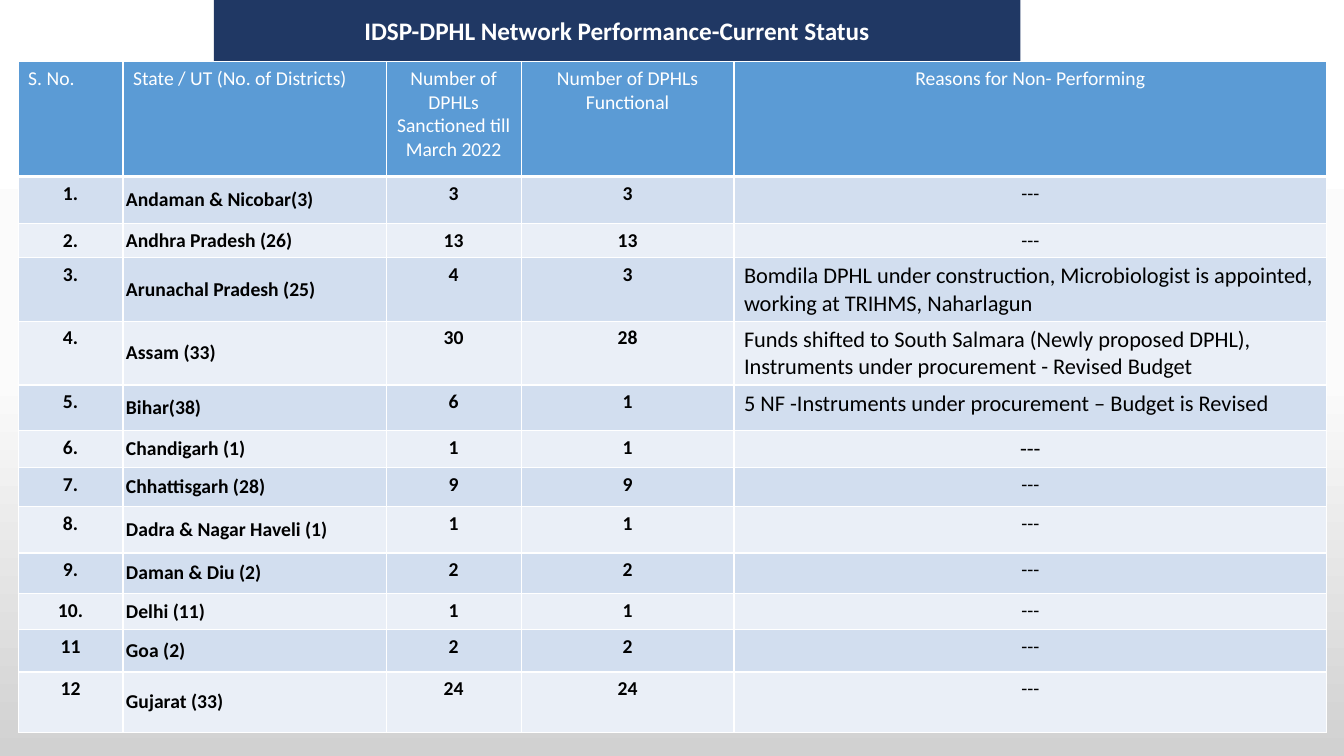
import copy

import lxml.etree
import pptx
import pptx.dml.color
import pptx.enum.text
import pptx.oxml.ns
import pptx.util

PX = 9144
WHITE = pptx.dml.color.RGBColor(0xFF, 0xFF, 0xFF)
BLACK = pptx.dml.color.RGBColor(0x00, 0x00, 0x00)
NAVY = pptx.dml.color.RGBColor(0x20, 0x38, 0x64)
BLUE = pptx.dml.color.RGBColor(0x5B, 0x9B, 0xD5)
BAND_DARK = pptx.dml.color.RGBColor(0xD2, 0xDE, 0xEF)
BAND_LIGHT = pptx.dml.color.RGBColor(0xEA, 0xEF, 0xF7)
MIST = pptx.dml.color.RGBColor(0xFB, 0xFB, 0xFB)
GREY = pptx.dml.color.RGBColor(0xD1, 0xD1, 0xD1)

LEFT = pptx.enum.text.PP_ALIGN.LEFT
CENTER = pptx.enum.text.PP_ALIGN.CENTER
MIDDLE = pptx.enum.text.MSO_ANCHOR.MIDDLE

HEADINGS = [
    "S. No.",
    "State / UT (No. of Districts)",
    "Number of DPHLs Sanctioned till March 2022",
    "Number of DPHLs Functional",
    "Reasons for Non- Performing",
]
NONE = "---"
STATES = [
    ("1.", "Andaman & Nicobar(3)", "3", "3", NONE),
    ("2.", "Andhra Pradesh (26)", "13", "13", NONE),
    ("3.", "Arunachal Pradesh (25)", "4", "3",
     "Bomdila DPHL under construction, Microbiologist is appointed, working at TRIHMS, Naharlagun"),
    ("4.", "Assam (33)", "30", "28",
     "Funds shifted to South Salmara (Newly proposed DPHL), "
     "Instruments under procurement - Revised Budget"),
    ("5.", "Bihar(38)", "6", "1", "5 NF -Instruments under procurement – Budget is Revised"),
    ("6.", "Chandigarh (1)", "1", "1", NONE),
    ("7.", "Chhattisgarh (28)", "9", "9", NONE),
    ("8.", "Dadra & Nagar Haveli (1)", "1", "1", NONE),
    ("9.", "Daman & Diu (2)", "2", "2", NONE),
    ("10.", "Delhi (11)", "1", "1", NONE),
    ("11", "Goa (2)", "2", "2", NONE),
    ("12", "Gujarat (33)", "24", "24", NONE),
]
LARGE_REASON_ROWS = range(3, 7)
COLUMN_WIDTHS = [104, 261, 134, 211, 588]
ROW_HEIGHTS = [114, 47, 32, 40, 44, 45, 35, 39, 46, 40, 36, 42, 60]


def px(length):
    return pptx.util.Emu(length * PX)


def format_paragraph(para, size, color, bold, align):
    para.alignment = align
    para.font.name = "Calibri"
    para.font.size = pptx.util.Pt(size)
    para.font.color.rgb = color
    para.font.bold = bold


def paint_background(page):
    fill = page.background.fill
    fill.gradient()
    fill.gradient_angle = 270
    first = next(page.element.iter(pptx.oxml.ns.qn("a:gs")))
    first.addnext(copy.deepcopy(first))
    for stop, position, color in zip(fill.gradient_stops, (0, 0.5, 1), (WHITE, MIST, GREY)):
        stop.position = position
        stop.color.rgb = color


def place_title(page, left, top, width, height):
    title = page.shapes.title
    title.left, title.top, title.width, title.height = map(px, (left, top, width, height))
    title.fill.solid()
    title.fill.fore_color.rgb = NAVY
    frame = title.text_frame
    frame.text = "IDSP-DPHL Network Performance-Current Status"
    frame.word_wrap = True
    frame.vertical_anchor = MIDDLE
    frame.auto_size = pptx.enum.text.MSO_AUTO_SIZE.SHAPE_TO_FIT_TEXT
    format_paragraph(frame.paragraphs[0], 18, WHITE, True, CENTER)


def add_borders(cell, row):
    widths = {"L": 1, "R": 1, "T": 3 if row == 1 else 1, "B": 3 if row == 0 else 1}
    properties = cell._tc.get_or_add_tcPr()
    for index, (side, points) in enumerate(widths.items()):
        line = lxml.etree.Element(
            pptx.oxml.ns.qn("a:ln" + side), w=str(pptx.util.Pt(points)))
        fill = lxml.etree.SubElement(line, pptx.oxml.ns.qn("a:solidFill"))
        lxml.etree.SubElement(fill, pptx.oxml.ns.qn("a:srgbClr"), val=str(WHITE))
        properties.insert(index, line)


def fill_cell(cell, row, column, text):
    is_header = row == 0
    is_state = column == 1
    is_reason = column == 4
    is_large = is_reason and row in LARGE_REASON_ROWS
    if is_header:
        band = BLUE
        align = LEFT if column < 2 else CENTER
    else:
        band = BAND_DARK if row % 2 else BAND_LIGHT
        align = LEFT if is_state or (is_reason and text != NONE) else CENTER
    cell.fill.solid()
    cell.fill.fore_color.rgb = band
    if is_state and not is_header:
        cell.vertical_anchor = MIDDLE
        cell.margin_left = cell.margin_right = px(3)
        cell.margin_top = cell.margin_bottom = px(2)
    cell.text = text
    format_paragraph(
        cell.text_frame.paragraphs[0],
        16 if is_large else 14,
        WHITE if is_header else BLACK,
        not is_header and not is_reason,
        align,
    )
    add_borders(cell, row)


def place_status_table(page, left, top, width, height):
    rows = [HEADINGS, *STATES]
    frame = page.shapes.add_table(
        len(rows), len(HEADINGS), px(left), px(top), px(width), px(height))
    table = frame.table
    table.first_row = False
    table.horz_banding = False
    for column, column_width in zip(table.columns, COLUMN_WIDTHS):
        column.width = px(column_width)
    for row, row_height in zip(table.rows, ROW_HEIGHTS):
        row.height = px(row_height)
    frame.height = px(height)
    for row, texts in enumerate(rows):
        for column, text in enumerate(texts):
            fill_cell(table.cell(row, column), row, column, text)


def main():
    deck = pptx.Presentation()
    deck.slide_width = px(1333)
    deck.slide_height = px(750)
    page = deck.slides.add_slide(deck.slide_layouts[5])
    paint_background(page)
    place_status_table(page, 18, 61, 1298, 677)
    place_title(page, 212, 10, 800, 40)
    deck.save("out.pptx")


if __name__ == "__main__":
    main()
